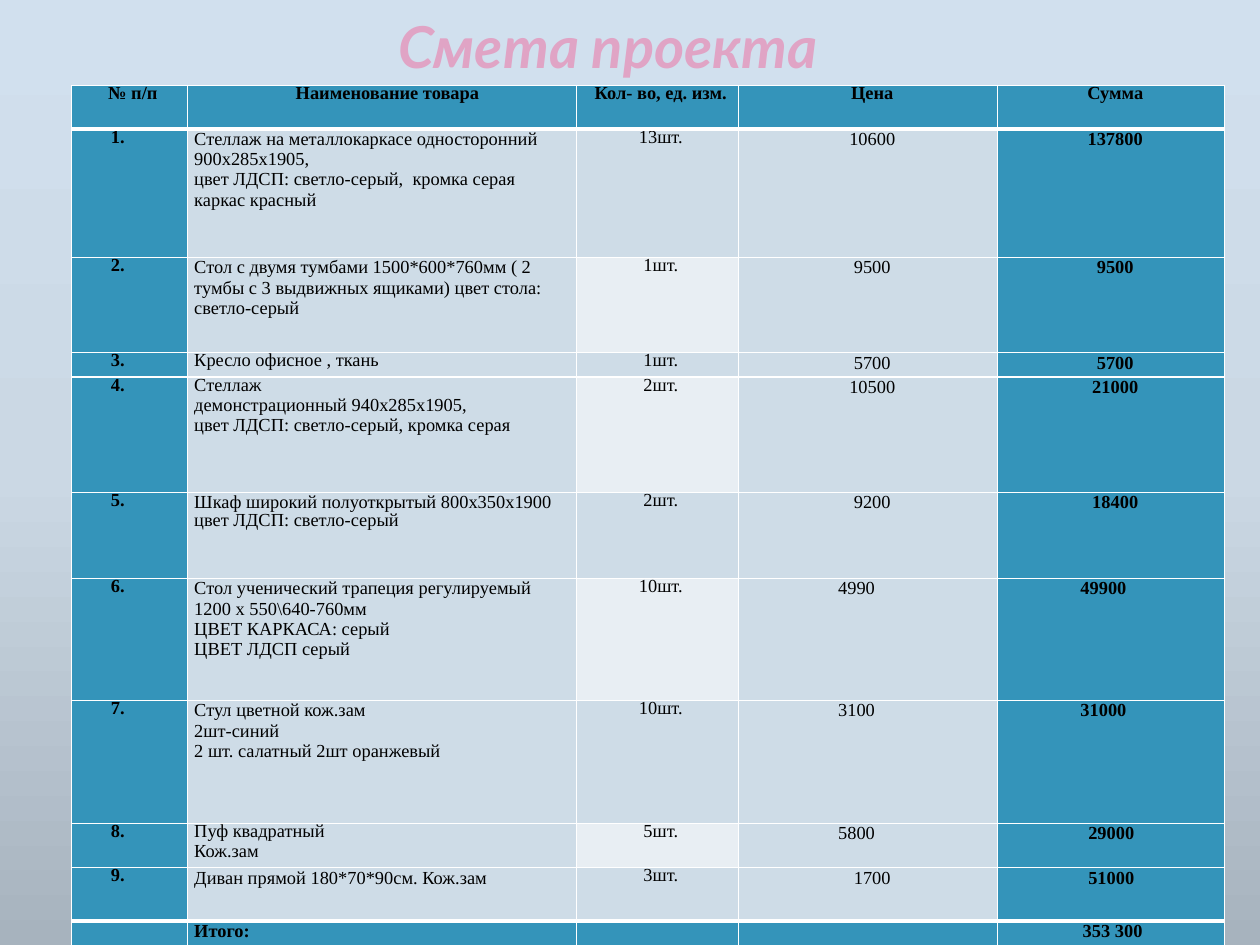
from copy import deepcopy

from lxml.etree import SubElement
from pptx import Presentation
from pptx.dml.color import RGBColor
from pptx.enum.text import MSO_ANCHOR as Anchor, PP_ALIGN as Align
from pptx.oxml.ns import qn
from pptx.util import Pt

TEAL = RGBColor(0x34, 0x94, 0xBA)
PALE = RGBColor(0xCE, 0xDC, 0xE7)
PALER = RGBColor(0xE8, 0xEE, 0xF3)
PINK = RGBColor(0xE0, 0xA4, 0xC5)
BLACK = RGBColor(0, 0, 0)
WHITE = RGBColor(0xFF, 0xFF, 0xFF)
BACKGROUND = [
    (0, RGBColor(0xD1, 0xE0, 0xEE)),
    (0.5, RGBColor(0xCB, 0xD8, 0xE4)),
    (1, RGBColor(0xA7, 0xB3, 0xBE)),
]

TITLE_FONT = {"name": "Lato", "size": Pt(44), "bold": True, "italic": True}
CELL_FONT = {"name": "Times New Roman", "size": Pt(14)}
TIGHT = Pt(13.8)

COLUMN_WIDTHS = [88.5, 296, 124, 197.25, 173]
ROW_HEIGHTS = [33, 98, 72.5, 18.5, 88, 65.5, 93, 93.5, 34, 40.5, 18.5]

HEADINGS = ["№ п/п", "Наименование товара", "Кол- во, ед. изм.", "Цена", "Сумма"]
HEADING_INDENTS = [5, 8.5, 5, 6, 6]
# Name lines, quantity, price, sum
GOODS = [
    (["Стеллаж на металлокаркасе односторонний 900х285х1905,",
      "цвет ЛДСП: светло-серый,  кромка серая", "каркас красный"],
     "13шт.", "10600", "137800"),
    (["Стол с двумя тумбами 1500*600*760мм ( 2 тумбы с 3 выдвижных ящиками) "
      "цвет стола: светло-серый"], "1шт.", "9500", "9500"),
    (["Кресло офисное , ткань"], "1шт.", "5700", "5700"),
    (["Стеллаж", "демонстрационный 940х285х1905,",
      "цвет ЛДСП: светло-серый, кромка серая"], "2шт.", "10500", "21000"),
    (["Шкаф широкий полуоткрытый 800х350х1900", "цвет ЛДСП: светло-серый"],
     "2шт.", "9200", "18400"),
    (["Стол ученический трапеция регулируемый", "1200 х 550\\640-760мм",
      "ЦВЕТ КАРКАСА: серый", "ЦВЕТ ЛДСП серый"], "10шт.", "4990", "49900"),
    (["Стул цветной кож.зам", "2шт-синий", "2 шт. салатный 2шт оранжевый"],
     "10шт.", "3100", "31000"),
    (["Пуф квадратный", "Кож.зам"], "5шт.", "5800", "29000"),
    (["Диван прямой 180*70*90см. Кож.зам"], "3шт.", "1700", "51000"),
]
TIGHT_LINES = {"Кресло офисное , ткань", "Стеллаж", "цвет ЛДСП: светло-серый",
               "Пуф квадратный"}
# (left, right) insets of price and sum that differ from the usual ones
USUAL_INSETS = ((6, 0), (6, 0))
SPECIAL_INSETS = {6: ((0, 18), (0, 12)), 7: ((0, 18), (0, 12)),
                  8: ((0, 18), (0, 0)), 9: ((6, 0), (0, 0))}


def apply_format(target, values):
    for name, value in values.items():
        setattr(target, name, value)


def paint_background(slide):
    fill = slide.background.fill
    fill.gradient()
    fill.gradient_angle = 270
    stop_list = slide.element.find(".//" + qn("a:gsLst"))
    stop_list.append(deepcopy(stop_list[0]))
    for stop, (position, color) in zip(fill.gradient_stops, BACKGROUND):
        stop.position = position
        stop.color.rgb = color


def add_title(slide, text):
    title = slide.shapes.title
    apply_format(title, {"left": Pt(163), "top": Pt(-6),
                         "width": Pt(601), "height": Pt(88)})
    frame = title.text_frame
    frame.text = text
    frame.vertical_anchor = Anchor.MIDDLE
    para = frame.paragraphs[0]
    apply_format(para, {"alignment": Align.CENTER, "line_spacing": 0.9})
    span = para.runs[0]
    apply_format(span.font, TITLE_FONT)
    span.font.color.rgb = PINK


def draw_borders(cell, top=1, bottom=1):
    properties = cell._tc.get_or_add_tcPr()
    for side, weight in {"L": 1, "R": 1, "T": top, "B": bottom}.items():
        line = SubElement(properties, qn(f"a:ln{side}"), w=str(Pt(weight)))
        solid = SubElement(line, qn("a:solidFill"))
        SubElement(solid, qn("a:srgbClr"), val=str(WHITE))


def fill_cell(cell, lines, color, bold=False, align=Align.CENTER,
              insets=(0, 0), tight=False):
    """Write one paragraph per line; tight sets an exact line pitch for all."""
    left, right = insets
    apply_format(cell, {"margin_left": Pt(left), "margin_right": Pt(right),
                        "margin_top": 0, "margin_bottom": 0})
    cell.fill.solid()
    cell.fill.fore_color.rgb = color
    frame = cell.text_frame
    frame.text = "\n".join(lines)
    for para in frame.paragraphs:
        para.alignment = align
        if tight or para.text in TIGHT_LINES:
            para.line_spacing = TIGHT
        for span in para.runs:
            apply_format(span.font, {**CELL_FONT, "bold": bold})
            span.font.color.rgb = BLACK
        if not para.runs:
            SubElement(para._p, qn("a:endParaRPr"), sz="1400")


def fill_heading_row(table):
    for column, (heading, indent) in enumerate(zip(HEADINGS, HEADING_INDENTS)):
        cell = table.cell(0, column)
        draw_borders(cell, bottom=3)
        fill_cell(cell, [heading], TEAL, True, insets=(indent, 0), tight=True)


def fill_goods_row(table, row, names, quantity, price, total):
    cells = [table.cell(row, column) for column in range(len(COLUMN_WIDTHS))]
    for cell in cells:
        draw_borders(cell, top=3 if row == 1 else 1,
                     bottom=3 if row == len(GOODS) else 1)
    number_cell, name_cell, quantity_cell, price_cell, sum_cell = cells
    price_insets, sum_insets = SPECIAL_INSETS.get(row, USUAL_INSETS)
    band = PALE if row % 2 else PALER
    fill_cell(number_cell, [f"{row}."], TEAL, True, insets=(0, 18), tight=True)
    fill_cell(name_cell, names, PALE, align=Align.LEFT, insets=(5, 0))
    fill_cell(quantity_cell, [quantity], band, insets=(5, 0), tight=True)
    fill_cell(price_cell, [price], PALE, insets=price_insets)
    fill_cell(sum_cell, [total], TEAL, True, insets=sum_insets)


def fill_total_row(table, row):
    for column, text in enumerate(["", "Итого:", "", "", "353 300"]):
        cell = table.cell(row, column)
        draw_borders(cell, top=3)
        is_label = column == 1
        fill_cell(cell, [text], TEAL, True,
                  align=Align.LEFT if is_label else Align.CENTER,
                  insets=(5 if is_label else 2, 0))


def add_estimate_table(slide):
    table = slide.shapes.add_table(
        len(ROW_HEIGHTS), len(COLUMN_WIDTHS), Pt(54.5), Pt(65.25),
        Pt(sum(COLUMN_WIDTHS)), Pt(sum(ROW_HEIGHTS))).table
    for column, width in zip(table.columns, COLUMN_WIDTHS):
        column.width = Pt(width)
    for row, height in zip(table.rows, ROW_HEIGHTS):
        row.height = Pt(height)
    fill_heading_row(table)
    for number, goods in enumerate(GOODS, start=1):
        fill_goods_row(table, number, *goods)
    fill_total_row(table, len(ROW_HEIGHTS) - 1)


def main():
    deck = Presentation()
    deck.slide_width, deck.slide_height = Pt(960), Pt(720)
    slide = deck.slides.add_slide(deck.slide_layouts[5])
    paint_background(slide)
    add_title(slide, "Смета проекта")
    add_estimate_table(slide)
    deck.save("out.pptx")


if __name__ == "__main__":
    main()
